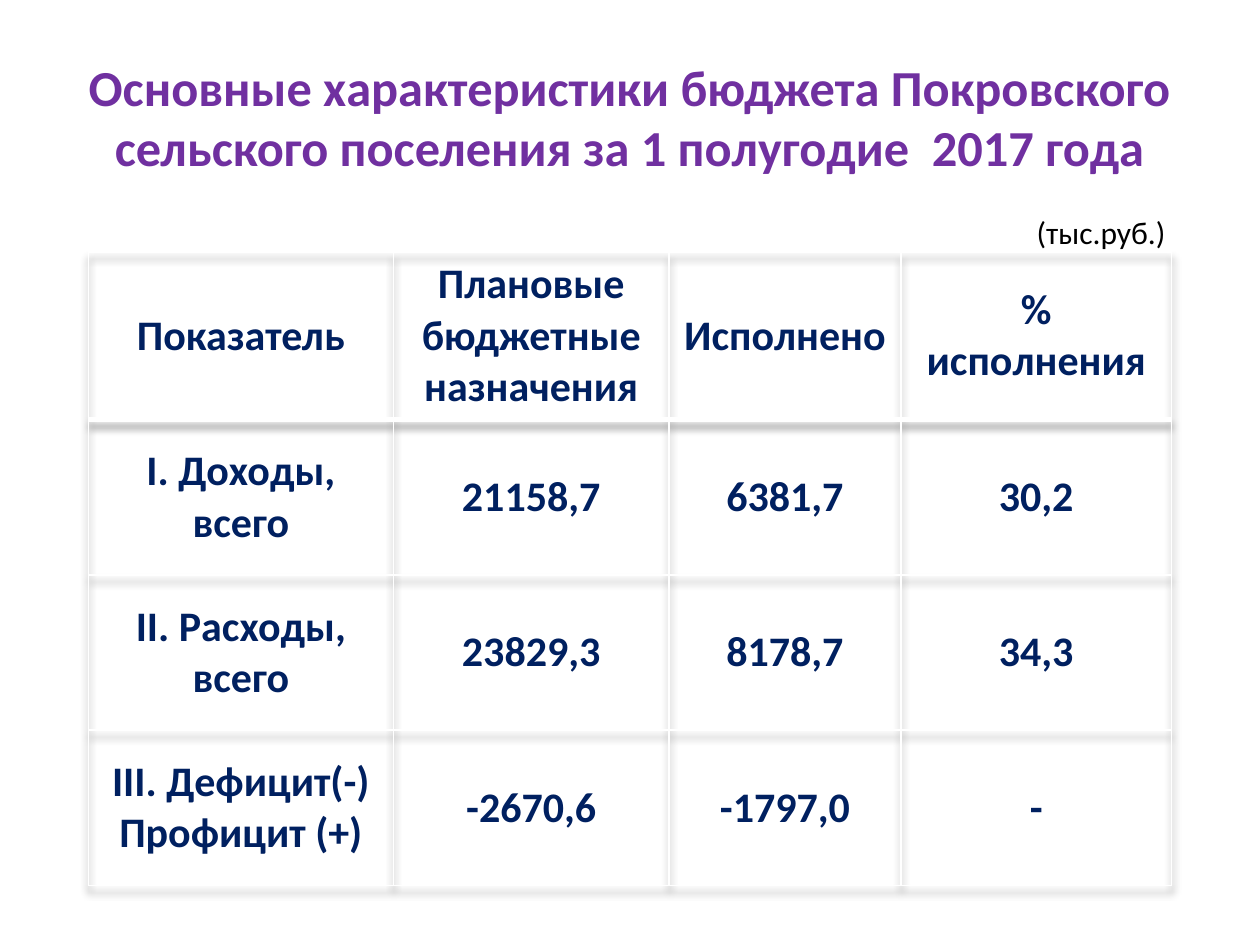
"""Build a slide with the main budget figures of a rural settlement."""
from lxml.etree import SubElement as Sub
from pptx import Presentation
from pptx.dml.color import RGBColor
from pptx.enum.text import MSO_ANCHOR as Anchor, PP_ALIGN as Align
from pptx.oxml import parse_xml
from pptx.oxml.ns import nsdecls, qn
from pptx.util import Cm, Pt

TITLE = "Основные характеристики бюджета Покровского сельского поселения за 1 полугодие  2017 года"
UNIT = "(тыс.руб.)"
ROWS = [
    ("Показатель", "Плановые бюджетные назначения", "Исполнено", "% исполнения"),
    ("I. Доходы, всего", "21158,7", "6381,7", "30,2"),
    ("II. Расходы, всего", "23829,3", "8178,7", "34,3"),
    ("III. Дефицит(-)\nПрофицит (+)", "-2670,6", "-1797,0", "-"),
]
WIDTHS = [6.15, 5.56, 4.67, 5.46]
HEIGHTS = [3.38] + [3.13] * 3

PURPLE = RGBColor(0x70, 0x30, 0xA0)
NAVY = RGBColor(0x00, 0x20, 0x60)
BLACK = RGBColor(0, 0, 0)
WHITE = RGBColor(0xFF, 0xFF, 0xFF)
FONT = "Calibri"
SHADOW = (
    f'<a:effectLst {nsdecls("a")}>'
    '<a:outerShdw blurRad="50800" dist="50800" dir="5400000" algn="ctr" rotWithShape="0">'
    '<a:srgbClr val="000000"><a:alpha val="43000"/></a:srgbClr>'
    "</a:outerShdw></a:effectLst>"
)


def style(frame, size, color, bold, align):
    """Format every paragraph and run of a text frame."""
    for para in frame.paragraphs:
        para.alignment = align
        for run in para.runs:
            font = run.font
            font.name, font.size, font.bold = FONT, Pt(size), bold
            font.color.rgb = color


def add_text(slide, text, box, size, color, bold, align, wrap):
    """Add a text box with one style."""
    frame = slide.shapes.add_textbox(*map(Cm, box)).text_frame
    frame.word_wrap = wrap
    frame.vertical_anchor = Anchor.MIDDLE
    frame.text = text
    style(frame, size, color, bold, align)


def add_edge(cell, side, width):
    """Draw one white border of a cell."""
    line = Sub(cell._tc.get_or_add_tcPr(), qn(f"a:ln{side}"), w=str(Pt(width)))
    fill = Sub(line, qn("a:solidFill"))
    Sub(fill, qn("a:srgbClr"), val=str(WHITE))


def add_grid(slide):
    """Add the table of figures."""
    size = map(Cm, (1.78, 5.08, sum(WIDTHS), sum(HEIGHTS)))
    shape = slide.shapes.add_table(len(ROWS), len(WIDTHS), *size)
    table = shape.table
    table.horz_banding = False
    table._tbl.tblPr.insert(0, parse_xml(SHADOW))
    for col, width in zip(table.columns, WIDTHS):
        col.width = Cm(width)
    for i, (row, height) in enumerate(zip(ROWS, HEIGHTS)):
        table.rows[i].height = Cm(height)
        edges = {"L": 1, "R": 1, "T": 3 if i == 1 else 1, "B": 3 if i == 0 else 1}
        for j, text in enumerate(row):
            cell = table.cell(i, j)
            for side, width in edges.items():
                add_edge(cell, side, width)
            cell.fill.background()
            cell.vertical_anchor = Anchor.MIDDLE
            cell.text_frame.text = text
            style(cell.text_frame, 24, NAVY, True, Align.CENTER)


def main():
    """Build and save the slide."""
    deck = Presentation()
    deck.slide_width, deck.slide_height = Cm(25.4), Cm(19.05)
    slide = deck.slides.add_slide(deck.slide_layouts[6])
    add_text(slide, TITLE, (1.27, 0.76, 22.86, 3.18), 28.8, PURPLE, True, Align.CENTER, True)
    add_grid(slide)
    add_text(slide, UNIT, (20.65, 4.17, 3.15, 1.02), 18, BLACK, False, Align.LEFT, False)
    deck.save("out.pptx")


if __name__ == "__main__":
    main()
